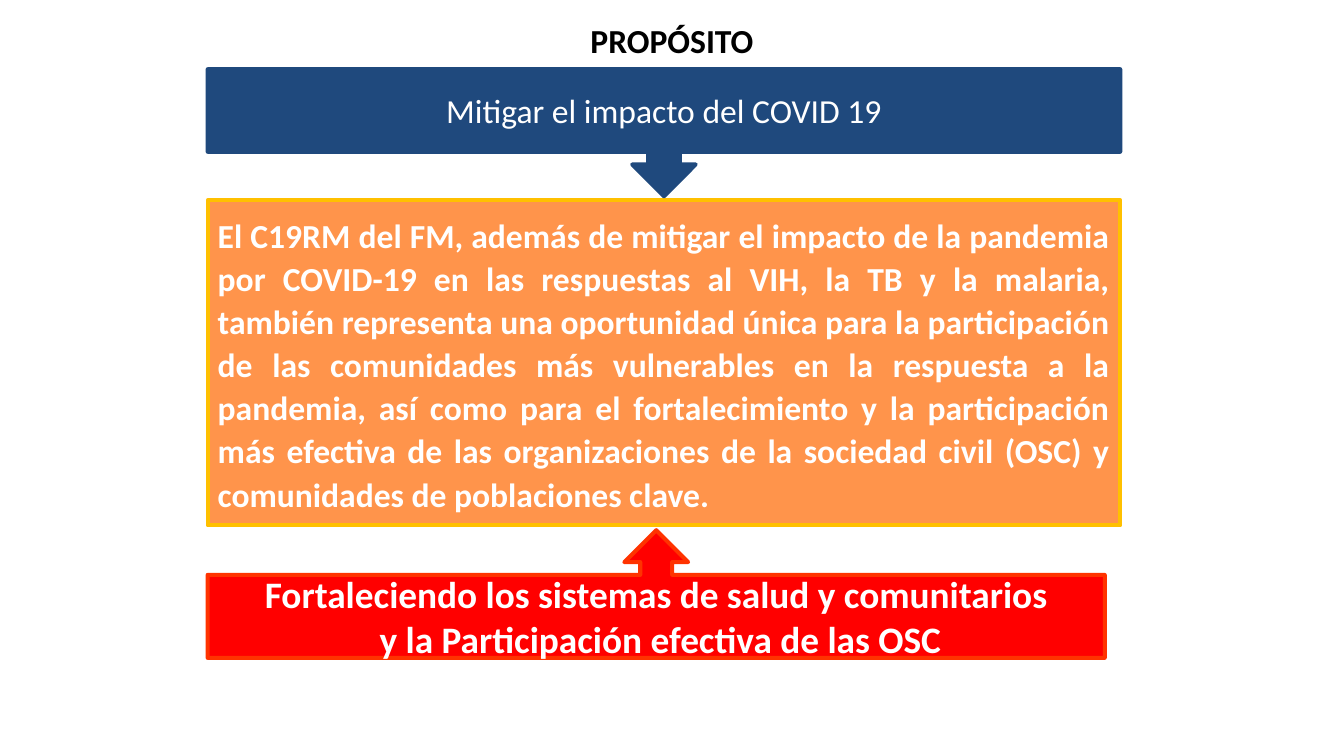
from pptx import Presentation
from pptx.dml.color import RGBColor
from pptx.enum.shapes import MSO_SHAPE as Shape
from pptx.enum.text import MSO_ANCHOR as Anchor, PP_ALIGN as Align
from pptx.util import Pt

PX = 9144
WHITE = RGBColor(0xFF, 0xFF, 0xFF)
BLACK = RGBColor(0x00, 0x00, 0x00)
NAVY = RGBColor(0x1F, 0x49, 0x7D)
ORANGE = RGBColor(0xFF, 0x94, 0x4B)
AMBER = RGBColor(0xFF, 0xC0, 0x00)
RED = RGBColor(0xFF, 0x00, 0x00)
SCARLET = RGBColor(0xFF, 0x33, 0x00)

CALLOUT_RATIOS = (0.25, 0.25, 0.25, 0.65)
PANEL_MARGINS = {
    "margin_left": 15,
    "margin_right": 15,
    "margin_top": 8,
    "margin_bottom": 8,
}
CENTERED = {"alignment": Align.CENTER}
JUSTIFIED = {
    "alignment": Align.JUSTIFY,
    "line_spacing": 1.07,
    "space_after": Pt(12),
}

GOAL = "Mitigar el impacto del COVID 19"
RATIONALE = (
    "El C19RM del FM, además de mitigar el impacto de la pandemia por COVID-19 "
    "en las respuestas al VIH, la TB y la malaria, también representa una "
    "oportunidad única para la participación de las comunidades más vulnerables "
    "en la respuesta a la pandemia, así como para el fortalecimiento y la "
    "participación más efectiva de las organizaciones de la sociedad civil (OSC) "
    "y comunidades de poblaciones clave."
)
MEANS = (
    "Fortaleciendo los sistemas de salud y comunitarios",
    " y la Participación efectiva de las OSC",
)


def to_emu(box):
    """Turn a box of px lengths into EMU."""
    return [length * PX for length in box]


def write_lines(frame, lines, layout, size, color=WHITE, bold=True):
    """Write one formatted paragraph for each line of text."""
    frame.word_wrap = True
    font_values = {"name": "Calibri", "size": Pt(size), "bold": bold}
    for index, line in enumerate(lines):
        paragraph = frame.add_paragraph() if index else frame.paragraphs[0]
        for name, value in layout.items():
            setattr(paragraph, name, value)
        run = paragraph.add_run()
        run.text = line
        for name, value in font_values.items():
            setattr(run.font, name, value)
        run.font.color.rgb = color


def add_heading(slide, box, text):
    """Place the heading above the panels."""
    heading = slide.shapes.add_textbox(*to_emu(box))
    write_lines(heading.text_frame, [text], CENTERED, 36, BLACK)


def add_panel(slide, box, preset, fill, border, ratios=()):
    """Place an outlined panel and return its text frame."""
    panel = slide.shapes.add_shape(preset, *to_emu(box))
    panel.shadow.inherit = False
    panel.fill.solid()
    panel.fill.fore_color.rgb = fill
    panel.line.color.rgb = border
    panel.line.width = Pt(4.34)
    for index, ratio in enumerate(ratios):
        panel.adjustments[index] = ratio
    frame = panel.text_frame
    frame.vertical_anchor = Anchor.MIDDLE
    for name, margin in PANEL_MARGINS.items():
        setattr(frame, name, margin * PX)
    return frame


def add_rationale(slide, box):
    """Place the central panel with the justified statement."""
    frame = add_panel(slide, box, Shape.RECTANGLE, ORANGE, AMBER)
    write_lines(frame, [RATIONALE], JUSTIFIED, 36)


def add_goal(slide, box):
    """Place the callout that points down to the rationale."""
    frame = add_panel(
        slide, box, Shape.DOWN_ARROW_CALLOUT, NAVY, NAVY, CALLOUT_RATIOS
    )
    write_lines(frame, [GOAL], CENTERED, 36, bold=False)


def add_means(slide, box):
    """Place the callout that points up to the rationale."""
    frame = add_panel(
        slide, box, Shape.UP_ARROW_CALLOUT, RED, SCARLET, CALLOUT_RATIOS
    )
    write_lines(frame, MEANS, CENTERED, 40)


def main():
    """Build the purpose slide and save it."""
    presentation = Presentation()
    presentation.slide_width = 2000 * PX
    presentation.slide_height = 1125 * PX
    slide = presentation.slides.add_slide(presentation.slide_layouts[6])
    add_rationale(slide, (309, 298, 1358, 484))
    add_goal(slide, (309, 103, 1358, 189))
    add_means(slide, (309, 789, 1335, 190))
    add_heading(slide, (687, 25, 626, 71), "PROPÓSITO")
    presentation.save("out.pptx")


if __name__ == "__main__":
    main()
